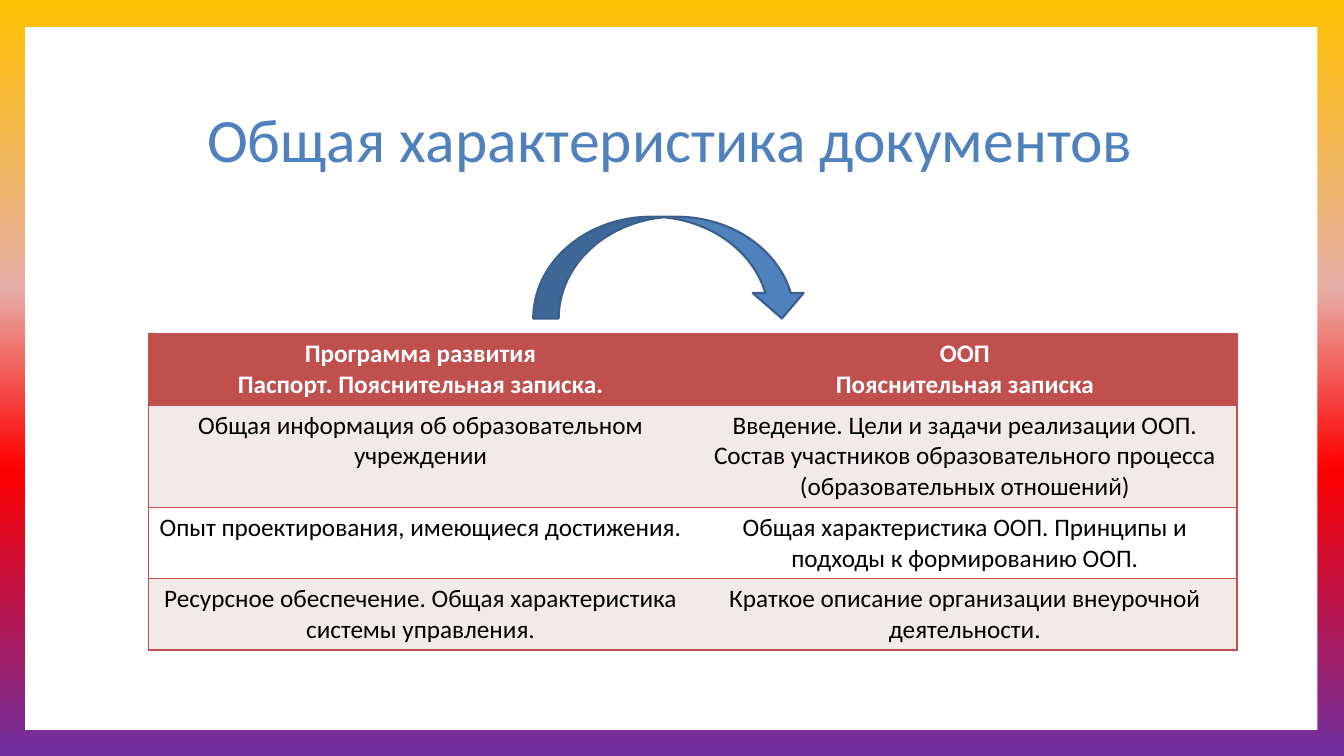
from lxml import etree
from pptx import Presentation
from pptx.dml.color import RGBColor
from pptx.enum.shapes import MSO_SHAPE
from pptx.enum.text import MSO_ANCHOR, PP_ALIGN
from pptx.oxml.ns import qn
from pptx.util import Pt

RECT, ARROW = MSO_SHAPE.RECTANGLE, MSO_SHAPE.CURVED_DOWN_ARROW
MIDDLE, CENTER = MSO_ANCHOR.MIDDLE, PP_ALIGN.CENTER
FONT = "Calibri"
WHITE = RGBColor(0xFF, 0xFF, 0xFF)
BLACK = RGBColor(0, 0, 0)
BLUE = RGBColor(0x4F, 0x81, 0xBD)
NAVY = RGBColor(0x3A, 0x5F, 0x8C)
RED = RGBColor(0xC0, 0x50, 0x4D)
PINK = RGBColor(0xF4, 0xE9, 0xE9)

STOPS = [(0, "FFC000"), (38, "E6AFA6"), (62, "FF0000"), (100, "7030A0")]
TITLE = "Общая характеристика документов"
ROWS = [
    (["Программа развития", "Паспорт. Пояснительная записка."],
     ["ООП", "Пояснительная записка"]),
    (["Общая информация об образовательном учреждении"],
     ["Введение. Цели и задачи реализации ООП. Состав участников "
      "образовательного процесса (образовательных отношений)"]),
    (["Опыт проектирования, имеющиеся достижения."],
     ["Общая характеристика ООП. Принципы и подходы к формированию ООП."]),
    (["Ресурсное обеспечение. Общая характеристика системы управления."],
     ["Краткое описание организации внеурочной деятельности."]),
]
HIGH = [51, 73, 51, 51]
WIDE = 388.8


def add_text(par, text, size, color, bold=False):
    par.alignment = CENTER
    run = par.add_run()
    run.text = text
    font = run.font
    font.name, font.size, font.bold = FONT, Pt(size), bold
    font.color.rgb = color


def add_shape(kind, box, color):
    shape = slide.shapes.add_shape(kind, *map(Pt, box))
    shape.shadow.inherit = False
    shape.fill.solid()
    shape.fill.fore_color.rgb = color
    shape.line.fill.background()
    return shape


def set_edges(cell, inner):
    props = cell._tc.get_or_add_tcPr()
    for spot, side in enumerate(("lnL", "lnR", "lnT", "lnB")):
        edge = etree.Element(qn("a:" + side), w=str(Pt(1)))
        if side == inner:
            etree.SubElement(edge, qn("a:noFill"))
        else:
            fill = etree.SubElement(edge, qn("a:solidFill"))
            etree.SubElement(fill, qn("a:srgbClr"), val=str(RED))
        props.insert(spot, edge)


deck = Presentation()
deck.slide_width, deck.slide_height = Pt(960), Pt(540)
slide = deck.slides.add_slide(deck.slide_layouts[6])

back = slide.background.fill
back.gradient()
back.gradient_angle = 270
stops = next(slide.element.iter(qn("a:gsLst")))
for old in list(stops):
    stops.remove(old)
for place, color in STOPS:
    stop = etree.SubElement(stops, qn("a:gs"), pos=str(place * 1000))
    etree.SubElement(stop, qn("a:srgbClr"), val=color)

add_shape(RECT, (18, 19.4, 923, 502), WHITE)

title = slide.shapes.add_textbox(Pt(90), Pt(48.2), Pt(777.6), Pt(106.6))
frame = title.text_frame
frame.word_wrap = True
frame.vertical_anchor = MIDDLE
frame.paragraphs[0].line_spacing = 0.9
add_text(frame.paragraphs[0], TITLE, 44, BLUE)

table = slide.shapes.add_table(
    len(ROWS), 2, Pt(106), Pt(238.3), Pt(2 * WIDE), Pt(sum(HIGH))).table
for col in table.columns:
    col.width = Pt(WIDE)
for r, (row, high) in enumerate(zip(ROWS, HIGH)):
    table.rows[r].height = Pt(high)
    head = r == 0
    for c, lines in enumerate(row):
        cell = table.cell(r, c)
        cell.fill.solid()
        cell.fill.fore_color.rgb = RED if head else PINK if r % 2 else WHITE
        set_edges(cell, "lnL" if c else "lnR")
        frame = cell.text_frame
        for n, line in enumerate(lines):
            par = frame.add_paragraph() if n else frame.paragraphs[0]
            add_text(par, line, 18, WHITE if head else BLACK, head)

arrow = add_shape(ARROW, (380.9, 154.8, 195.8, 72.7), BLUE)
arrow.line.color.rgb = NAVY
arrow.line.width = Pt(1.5)

deck.save("out.pptx")
